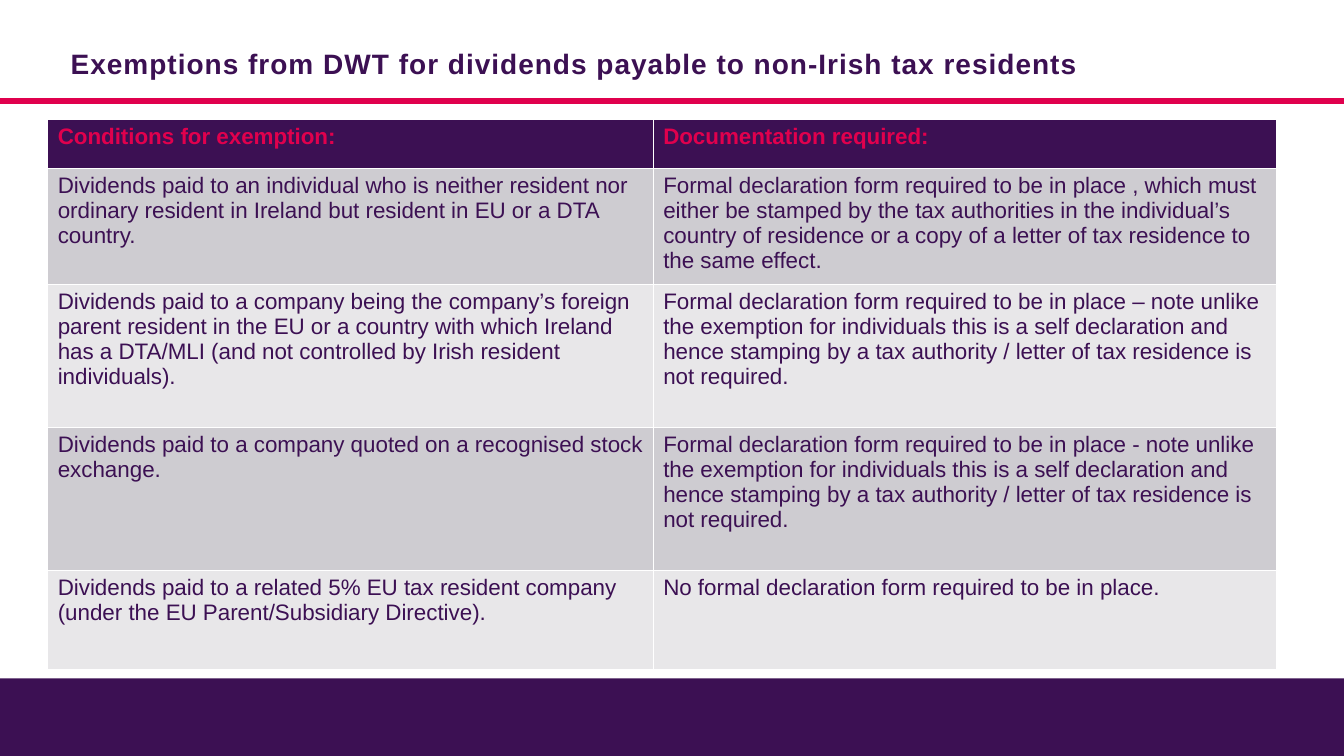
import pptx
import pptx.dml.color
import pptx.enum.shapes
import pptx.enum.text
import pptx.util
import lxml.etree
from dataclasses import dataclass


@dataclass(frozen=True)
class Theme:
    font: str = "Arial"
    purple: pptx.dml.color.RGBColor = pptx.dml.color.RGBColor(0x3C, 0x10, 0x53)
    red: pptx.dml.color.RGBColor = pptx.dml.color.RGBColor(0xE0, 0x00, 0x4D)
    dark_band: pptx.dml.color.RGBColor = pptx.dml.color.RGBColor(0xCE, 0xCC, 0xD1)
    light_band: pptx.dml.color.RGBColor = pptx.dml.color.RGBColor(0xE8, 0xE7, 0xE9)
    title_size: int = 20
    table_size: int = 16


theme = Theme()
deck = pptx.Presentation()
deck.slide_width = pptx.util.Inches(13.33)
deck.slide_height = pptx.util.Inches(7.5)


def across(percent):
    return round(deck.slide_width * percent / 100)


def down(percent):
    return round(deck.slide_height * percent / 100)


page = deck.slides.add_slide(deck.slide_layouts.get_by_name("Title Only"))

# Footer band and rule under the title
footer_top = 89.75
footer = page.shapes.add_shape(
    pptx.enum.shapes.MSO_SHAPE.RECTANGLE,
    0, down(footer_top), deck.slide_width, down(100 - footer_top),
)
footer.shadow.inherit = False
footer.fill.solid()
footer.fill.fore_color.rgb = theme.purple
footer.line.fill.background()

rule_y = down(13.33)
rule = page.shapes.add_connector(
    pptx.enum.shapes.MSO_CONNECTOR.STRAIGHT, 0, rule_y, deck.slide_width, rule_y
)
rule.line.color.rgb = theme.red
rule.line.width = pptx.util.Pt(4)
lxml.etree.SubElement(rule._element.spPr, pptx.oxml.ns.qn("a:effectLst"))

# Title
title = page.shapes.title
title.left, title.top = across(5.25), down(6.27)
title.width, title.height = across(87.5), down(6.5)
frame = title.text_frame
frame.auto_size = pptx.enum.text.MSO_AUTO_SIZE.NONE
frame.vertical_anchor = pptx.enum.text.MSO_ANCHOR.TOP
frame.margin_left = frame.margin_right = 0
frame.text = "Exemptions from DWT for dividends payable to non-Irish tax residents"
para = frame.paragraphs[0]
para.alignment = pptx.enum.text.PP_ALIGN.LEFT
para.line_spacing = 0.83
para.font.name = theme.font
para.font.size = pptx.util.Pt(theme.title_size)
para.font.bold = True
para.font.color.rgb = theme.purple
para.runs[0].font._element.set("spc", "70")

# Exemptions table
self_declaration = (
    "note unlike the exemption for individuals this is a self declaration and "
    "hence stamping by a tax authority / letter of tax residence is not required."
)
exemptions = [
    ("Conditions for exemption:", "Documentation required:"),
    (
        "Dividends paid to an individual who is neither resident nor ordinary "
        "resident in Ireland but resident in EU or a DTA country.",
        "Formal declaration form required to be in place , which must either be "
        "stamped by the tax authorities in the individual’s country of residence "
        "or a copy of a letter of tax residence to the same effect.",
    ),
    (
        "Dividends paid to a company being the company’s foreign parent resident "
        "in the EU or a country with which Ireland has a DTA/MLI (and not "
        "controlled by Irish resident individuals).",
        "Formal declaration form required to be in place – " + self_declaration,
    ),
    (
        "Dividends paid to a company quoted on a recognised stock exchange.",
        "Formal declaration form required to be in place - " + self_declaration,
    ),
    (
        "Dividends paid to a related 5% EU tax resident company (under the EU "
        "Parent/Subsidiary Directive).",
        "No formal declaration form required to be in place.",
    ),
]
column_widths = [45.05, 46.35]
row_heights = [6.55, 15.35, 18.9, 18.9, 13.1]

table = page.shapes.add_table(
    len(row_heights), len(column_widths),
    across(3.55), down(15.75), across(sum(column_widths)), down(sum(row_heights)),
).table
for column, width in zip(table.columns, column_widths):
    column.width = across(width)

for row_number, (row, height, texts) in enumerate(
    zip(table.rows, row_heights, exemptions)
):
    row.height = down(height)
    is_header = row_number == 0
    band = theme.dark_band if row_number % 2 else theme.light_band
    for cell, text in zip(row.cells, texts):
        cell.fill.solid()
        cell.fill.fore_color.rgb = theme.purple if is_header else band
        cell.text = text
        font = cell.text_frame.paragraphs[0].font
        font.name = theme.font
        font.size = pptx.util.Pt(theme.table_size)
        font.bold = is_header
        font.color.rgb = theme.red if is_header else theme.purple

deck.save("out.pptx")
